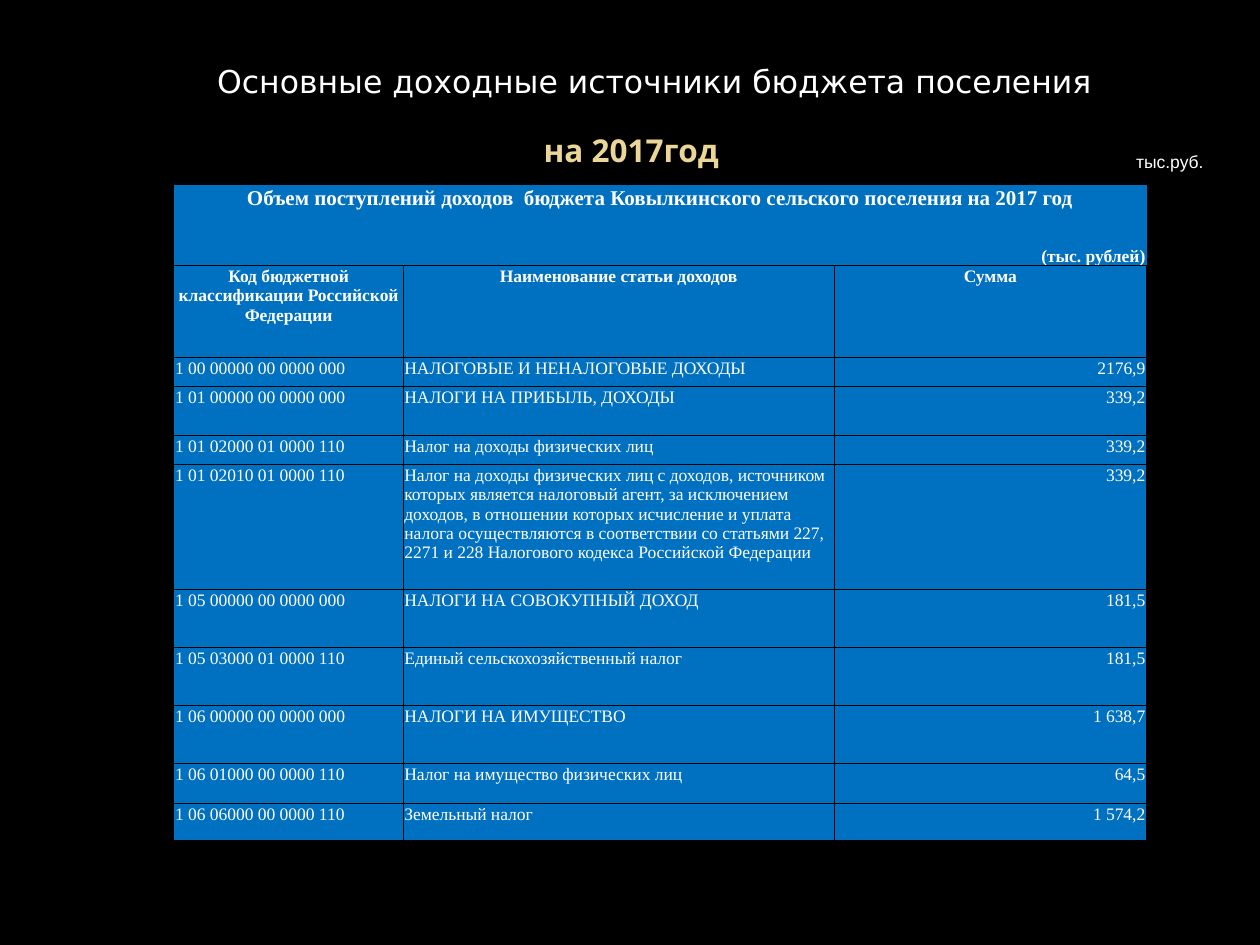
from pptx import Presentation
from pptx.dml.color import RGBColor
from pptx.enum.text import MSO_ANCHOR, PP_ALIGN
from pptx.oxml import parse_xml
from pptx.oxml.ns import nsdecls
from pptx.util import Inches, Pt

BLACK = RGBColor(0x00, 0x00, 0x00)
WHITE = RGBColor(0xFF, 0xFF, 0xFF)
GOLD = RGBColor(0xEA, 0xD6, 0x96)
BLUE = RGBColor(0x00, 0x70, 0xC0)

COLUMN_WIDTHS = [1.82, 3.42, 2.48]
ROW_HEIGHTS = [0.37, 0.27, 0.73, 0.23, 0.39, 0.23, 0.99, 0.46, 0.46, 0.46, 0.32, 0.29]
BANNERS = [
    ("Объем поступлений доходов  бюджета Ковылкинского сельского поселения на 2017 год",
     12, PP_ALIGN.CENTER, MSO_ANCHOR.TOP, ""),
    ("(тыс. рублей)", 10, PP_ALIGN.RIGHT, MSO_ANCHOR.BOTTOM, "B"),
]
HEADINGS = ("Код бюджетной классификации Российской Федерации",
            "Наименование статьи доходов", "Сумма")
INCOME = [
    ("1 00 00000 00 0000 000", "НАЛОГОВЫЕ И НЕНАЛОГОВЫЕ ДОХОДЫ", "2176,9"),
    ("1 01 00000 00 0000 000", "НАЛОГИ НА ПРИБЫЛЬ, ДОХОДЫ", "339,2"),
    ("1 01 02000 01 0000 110", "Налог на доходы физических лиц", "339,2"),
    ("1 01 02010 01 0000 110",
     "Налог на доходы физических лиц с доходов, источником которых является "
     "налоговый агент, за исключением доходов, в отношении которых исчисление "
     "и уплата налога осуществляются в соответствии со статьями 227, 2271 и 228 "
     "Налогового кодекса Российской Федерации", "339,2"),
    ("1 05 00000 00 0000 000", "НАЛОГИ НА СОВОКУПНЫЙ ДОХОД", "181,5"),
    ("1 05 03000 01 0000 110", "Единый сельскохозяйственный налог", "181,5"),
    ("1 06 00000 00 0000 000", "НАЛОГИ НА ИМУЩЕСТВО", "1 638,7"),
    ("1 06 01000 00 0000 110", "Налог на имущество физических лиц", "64,5"),
    ("1 06 06000 00 0000 110", "Земельный налог", "1 574,2"),
]


def write(frame, text, font, size, color, align, bold=False):
    para = frame.paragraphs[0]
    para.alignment = align
    span = para.add_run()
    span.text = text
    span.font.name = font
    span.font.size = Pt(size)
    span.font.bold = bold
    span.font.color.rgb = color


def format_cell(cell, text, size, align, bold=False, anchor=MSO_ANCHOR.TOP, sides="LRTB"):
    """Fill one table cell and draw black borders on the named sides only."""
    cell.margin_left = cell.margin_right = cell.margin_top = Inches(0.01)
    cell.margin_bottom = 0
    cell.vertical_anchor = anchor
    write(cell.text_frame, text, "Times New Roman", size, WHITE, align, bold)
    properties = cell._tc.get_or_add_tcPr()
    for side in "LRTB":
        paint = (f'<a:solidFill><a:srgbClr val="{BLACK}"/></a:solidFill>'
                 if side in sides else "<a:noFill/>")
        properties.append(parse_xml(
            f'<a:ln{side} {nsdecls("a")} w="{Pt(0.5)}">{paint}</a:ln{side}>'))
    cell.fill.solid()
    cell.fill.fore_color.rgb = BLUE


deck = Presentation()
deck.slide_width, deck.slide_height = Inches(10), Inches(7.5)
page = deck.slides.add_slide(deck.slide_layouts[6])
page.background.fill.solid()
page.background.fill.fore_color.rgb = BLACK

captions = [
    ((7.92, 1.15, 1.73, 0.27), MSO_ANCHOR.TOP,
     ("тыс.руб.", "Arial", 10, WHITE, PP_ALIGN.RIGHT)),
    ((0.51, 0.29, 9, 1.1), MSO_ANCHOR.BOTTOM,
     ("на 2017год", "Noto Sans", 18, GOLD, PP_ALIGN.CENTER, True)),
    ((1.06, 0.44, 8.35, 0.85), MSO_ANCHOR.TOP,
     ("Основные доходные источники бюджета поселения ", "DejaVu Sans", 18, WHITE,
      PP_ALIGN.CENTER)),
]
for place, anchor, wording in captions:
    box = page.shapes.add_textbox(*map(Inches, place))
    box.text_frame.word_wrap = True
    box.text_frame.vertical_anchor = anchor
    write(box.text_frame, *wording)

table = page.shapes.add_table(
    len(ROW_HEIGHTS), len(COLUMN_WIDTHS), Inches(1.38), Inches(1.47),
    Inches(sum(COLUMN_WIDTHS)), Inches(sum(ROW_HEIGHTS))).table
table.first_row = table.horz_banding = False
for column, width in zip(table.columns, COLUMN_WIDTHS):
    column.width = Inches(width)
for row, height in zip(table.rows, ROW_HEIGHTS):
    row.height = Inches(height)

for index, (text, size, align, anchor, sides) in enumerate(BANNERS):
    banner = table.cell(index, 0)
    banner.merge(table.cell(index, 2))
    format_cell(banner, text, size, align, True, anchor, sides)

for column, heading in enumerate(HEADINGS):
    format_cell(table.cell(2, column), heading, 10, PP_ALIGN.CENTER, True)

for index, entry in enumerate(INCOME, start=3):
    for column, text in enumerate(entry):
        align = PP_ALIGN.RIGHT if column == 2 else PP_ALIGN.LEFT
        format_cell(table.cell(index, column), text, 10, align)

deck.save("out.pptx")
